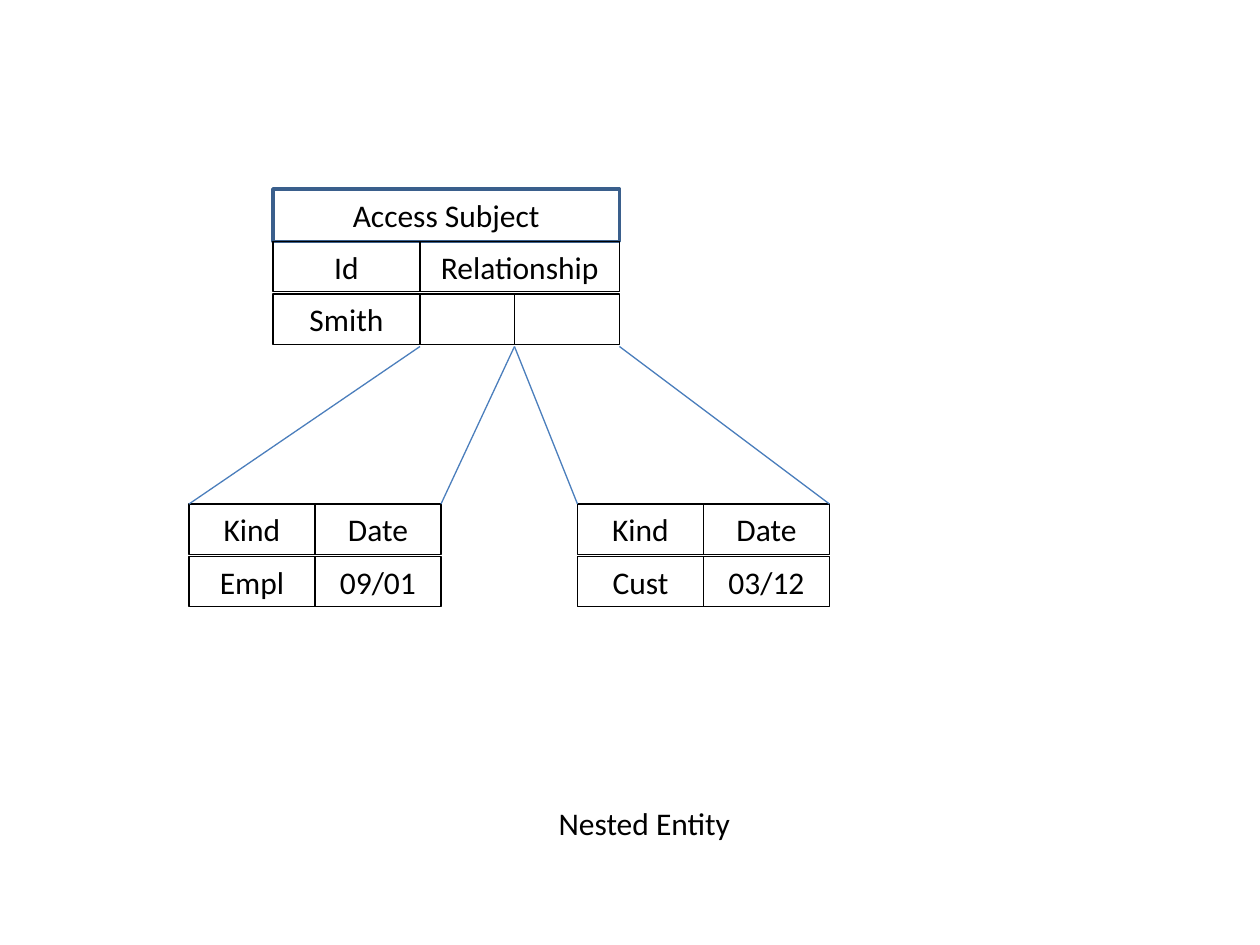
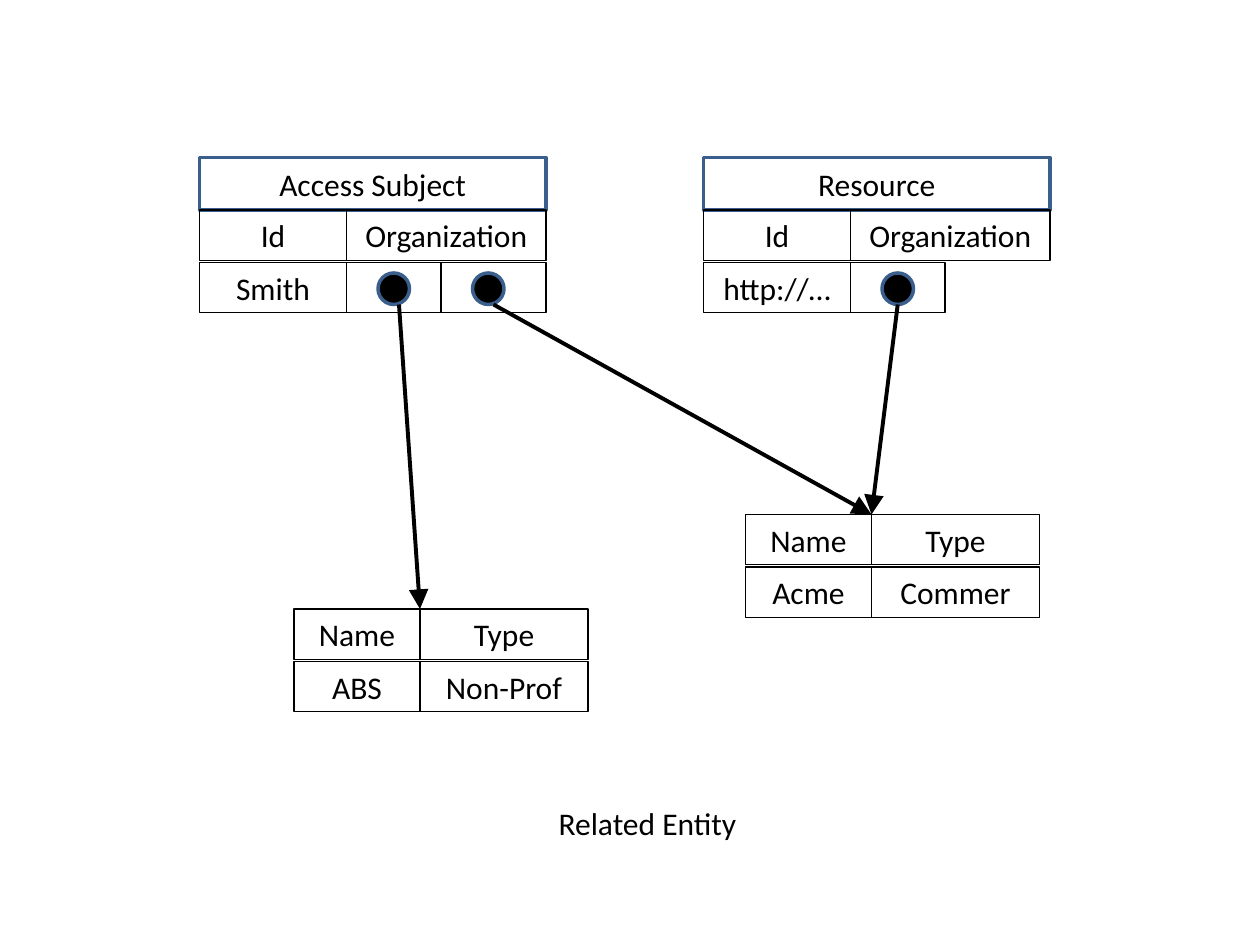
import dataclasses

import lxml.etree
import pptx
import pptx.dml.color
import pptx.enum.shapes
import pptx.enum.text
import pptx.oxml.ns
import pptx.util

EMU_PER_PX = 7620  # 120 px to the inch
PAGE_WIDTH, PAGE_HEIGHT = 1200, 900
ROW_PITCH, CELL_HEIGHT = 50, 48
DOT_SIZE = 30
FONT, FONT_SIZE = "Calibri", 18
TITLE_ONLY = 5
COLOURS = {"ink": "000000", "paper": "FFFFFF", "frame": "3A5F8C", "link": "4B7EBC"}
RECTANGLE = pptx.enum.shapes.MSO_SHAPE.RECTANGLE
OVAL = pptx.enum.shapes.MSO_SHAPE.OVAL

SUBJECT_WIDTHS = (140, 190)
SPLIT_WIDTHS = (140, 90, 100)
PAIR_WIDTHS = (120, 120)
ORGANIZATION_WIDTHS = (120, 160)


@dataclasses.dataclass(frozen=True)
class Row:
    widths: tuple[int, ...]
    texts: tuple[str, ...]


@dataclasses.dataclass(frozen=True)
class Entity:
    left: int
    top: int
    rows: tuple[Row, ...]
    heading: str = ""


@dataclasses.dataclass(frozen=True)
class Link:
    start: tuple[int, int]
    end: tuple[int, int]


@dataclasses.dataclass(frozen=True)
class Diagram:
    caption: str
    entities: tuple[Entity, ...]
    links: tuple[Link, ...]
    dots: tuple[tuple[int, int], ...] = ()
    link_colour: str = "link"
    link_width: float = 0.75
    arrows: bool = False


def grid(left: int, top: int, widths: tuple[int, ...], *texts: tuple[str, ...]) -> Entity:
    """An entity without heading whose rows share the same column widths."""
    return Entity(left, top, tuple(Row(widths, row) for row in texts))


NESTED = Diagram(
    caption="Nested Entity",
    entities=(
        Entity(260, 180, (Row(SUBJECT_WIDTHS, ("Id", "Relationship")),
                          Row(SPLIT_WIDTHS, ("Smith", "", ""))), "Access Subject"),
        grid(180, 480, PAIR_WIDTHS, ("Kind", "Date"), ("Empl", "09/01")),
        grid(550, 480, PAIR_WIDTHS, ("Kind", "Date"), ("Cust", "03/12")),
    ),
    links=(
        Link((400, 330), (180, 480)),
        Link((490, 330), (420, 480)),
        Link((490, 330), (550, 480)),
        Link((590, 330), (790, 480)),
    ),
)

RELATED = Diagram(
    caption="Related Entity",
    entities=(
        Entity(190, 150, (Row(SUBJECT_WIDTHS, ("Id", "Organization")),
                          Row(SPLIT_WIDTHS, ("Smith", "", ""))), "Access Subject"),
        grid(280, 580, ORGANIZATION_WIDTHS, ("Name", "Type"), ("ABS", "Non-Prof")),
        Entity(670, 150, (Row(SUBJECT_WIDTHS, ("Id", "Organization")),
                          Row(SPLIT_WIDTHS[:2], ("http://…", ""))), "Resource"),
        grid(710, 490, ORGANIZATION_WIDTHS, ("Name", "Type"), ("Acme", "Commer")),
    ),
    links=(
        Link((380, 290), (400, 580)),
        Link((470, 290), (830, 490)),
        Link((855, 290), (830, 490)),
    ),
    dots=((375, 275), (465, 275), (855, 275)),
    link_colour="ink",
    link_width=2.25,
    arrows=True,
)


def px(*lengths: int) -> list[pptx.util.Emu]:
    return [pptx.util.Emu(length * EMU_PER_PX) for length in lengths]


def colour(name: str) -> pptx.dml.color.RGBColor:
    return pptx.dml.color.RGBColor.from_string(COLOURS[name])


def write(box, text: str, align, anchor) -> None:
    frame = box.text_frame
    frame.vertical_anchor = anchor
    para = frame.paragraphs[0]
    para.alignment = align
    span = para.add_run()
    span.text = text
    span.font.name = FONT
    span.font.size = pptx.util.Pt(FONT_SIZE)
    span.font.color.rgb = colour("ink")


def add_outlined(page, kind, bounds: tuple[int, int, int, int],
                 line: str, width: float, fill: str = ""):
    box = page.shapes.add_shape(kind, *px(*bounds))
    box.shadow.inherit = False
    if fill:
        box.fill.solid()
        box.fill.fore_color.rgb = colour(fill)
    else:
        box.fill.background()
    box.line.color.rgb = colour(line)
    box.line.width = pptx.util.Pt(width)
    return box


def add_entity(page, entity: Entity) -> None:
    centre = pptx.enum.text.PP_ALIGN.CENTER
    anchors = pptx.enum.text.MSO_ANCHOR
    top = entity.top
    if entity.heading:
        bounds = (entity.left, top, sum(entity.rows[0].widths), ROW_PITCH)
        box = add_outlined(page, RECTANGLE, bounds, "frame", 2, "paper")
        write(box, entity.heading, centre, anchors.MIDDLE)
        top += ROW_PITCH
    for row in entity.rows:
        left = entity.left
        for width, text in zip(row.widths, row.texts):
            box = add_outlined(page, RECTANGLE, (left, top, width, CELL_HEIGHT), "ink", 0.75)
            if text:
                write(box, text, centre, anchors.TOP)
                box.text_frame.auto_size = pptx.enum.text.MSO_AUTO_SIZE.SHAPE_TO_FIT_TEXT
            left += width
        top += ROW_PITCH


def add_link(page, link: Link, diagram: Diagram) -> None:
    connector = page.shapes.add_connector(
        pptx.enum.shapes.MSO_CONNECTOR.STRAIGHT, *px(*link.start, *link.end))
    connector.line.color.rgb = colour(diagram.link_colour)
    connector.line.width = pptx.util.Pt(diagram.link_width)
    if diagram.arrows:
        lxml.etree.SubElement(connector.line._get_or_add_ln(), pptx.oxml.ns.qn("a:tailEnd"),
                              type="triangle", w="lg", len="lg")
    lxml.etree.SubElement(connector._element.spPr, pptx.oxml.ns.qn("a:effectLst"))


def add_caption(page, text: str) -> None:
    box = page.shapes.title
    box.left, box.top, box.width, box.height = px(520, 760, 210, CELL_HEIGHT)
    write(box, text, pptx.enum.text.PP_ALIGN.LEFT, pptx.enum.text.MSO_ANCHOR.TOP)
    box.text_frame.word_wrap = True
    box.text_frame.auto_size = pptx.enum.text.MSO_AUTO_SIZE.SHAPE_TO_FIT_TEXT


def add_diagram(deck, diagram: Diagram) -> None:
    page = deck.slides.add_slide(deck.slide_layouts[TITLE_ONLY])
    add_caption(page, diagram.caption)
    for entity in diagram.entities:
        add_entity(page, entity)
    for x, y in diagram.dots:
        bounds = (x - DOT_SIZE // 2, y - DOT_SIZE // 2, DOT_SIZE, DOT_SIZE)
        add_outlined(page, OVAL, bounds, "frame", 2, "ink")
    for link in diagram.links:
        add_link(page, link, diagram)


def main() -> None:
    deck = pptx.Presentation()
    deck.slide_width, deck.slide_height = px(PAGE_WIDTH, PAGE_HEIGHT)
    for diagram in (NESTED, RELATED):
        add_diagram(deck, diagram)
    deck.save("out.pptx")


if __name__ == "__main__":
    main()
